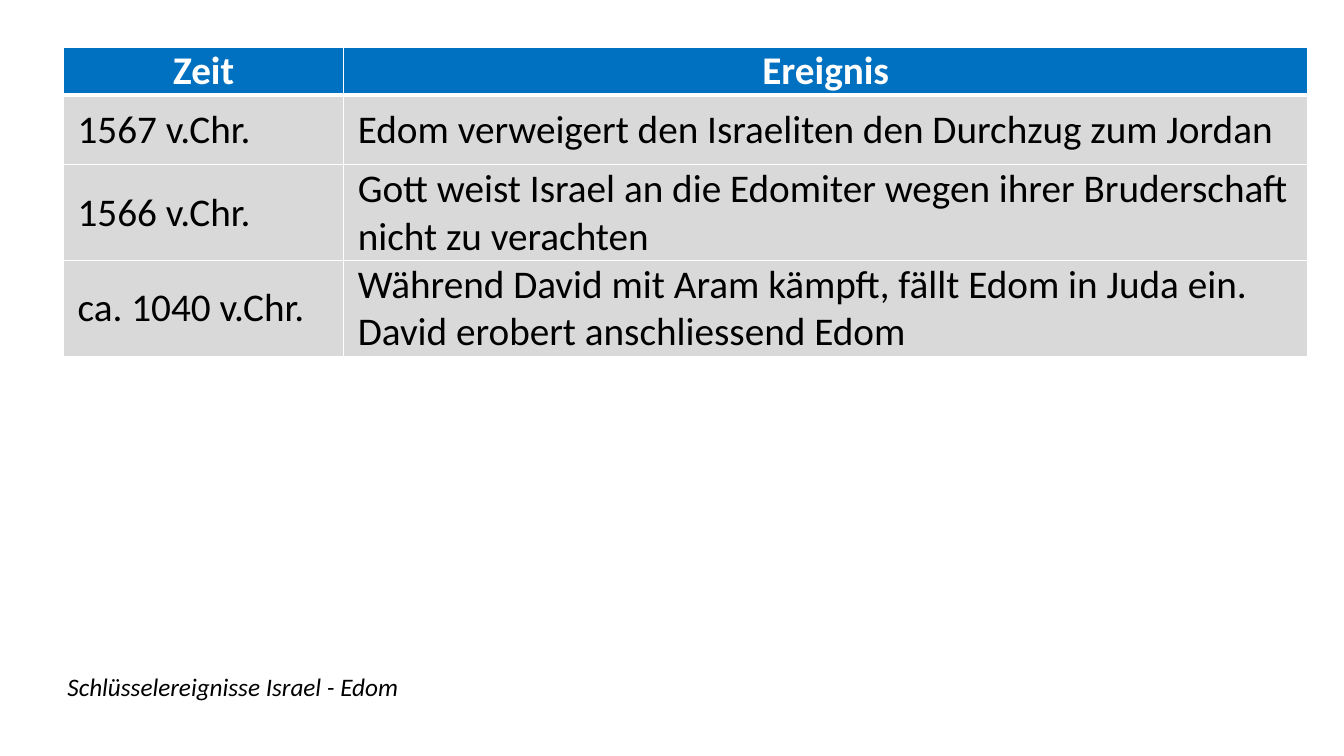
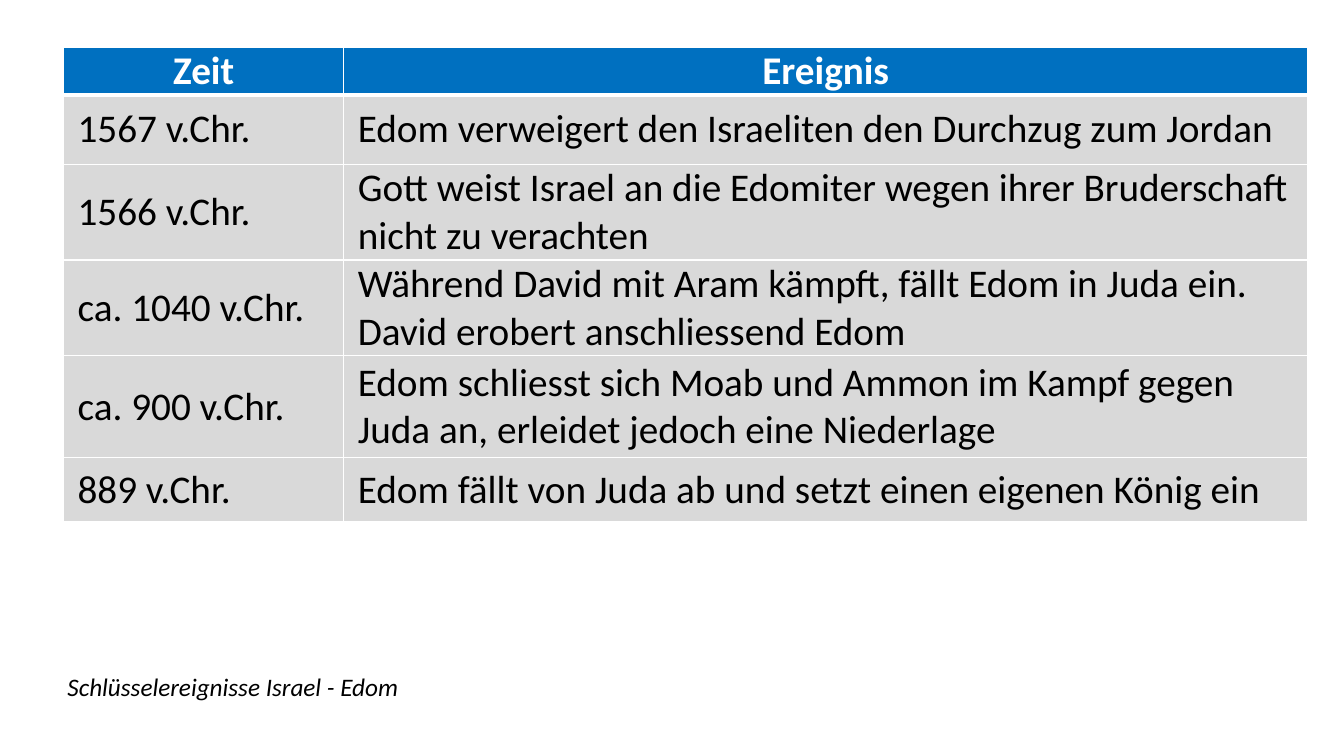
"""Build two slides listing key events between Israel and Edom."""
from lxml.etree import SubElement
from pptx import Presentation
from pptx.dml.color import RGBColor
from pptx.enum.text import MSO_ANCHOR as Anchor, MSO_AUTO_SIZE as AutoSize, PP_ALIGN as Align
from pptx.oxml.ns import qn
from pptx.util import Inches, Pt

HEADINGS = ("Zeit", "Ereignis")
EVENTS = [
    ("1567 v.Chr.", "Edom verweigert den Israeliten den Durchzug zum Jordan", 0.69),
    ("1566 v.Chr.", "Gott weist Israel an die Edomiter wegen ihrer Bruderschaft nicht zu verachten", 0.95),
    ("ca. 1040 v.Chr.", "Während David mit Aram kämpft, fällt Edom in Juda ein. "
     "David erobert anschliessend Edom", 0.95),
    ("ca. 900 v.Chr.", "Edom schliesst sich Moab und Ammon im Kampf gegen Juda an, "
     "erleidet jedoch eine Niederlage", 1.01),
    ("889 v.Chr.", "Edom fällt von Juda ab und setzt einen eigenen König ein", 0.64),
]
EVENTS_PER_SLIDE = (3, 5)
FOOTER = "Schlüsselereignisse Israel - Edom"

COLORS = {"header": "0070C0", "body": "D9D9D9", "white": "FFFFFF", "black": "000000"}
HEADER_FONT = {"name": "Calibri", "size": Pt(28), "bold": True}
BODY_FONT = {**HEADER_FONT, "bold": False}
FOOTER_FONT = {"name": "Calibri", "size": Pt(18), "italic": True}
CELL_FORMAT = {
    "vertical_anchor": Anchor.MIDDLE,
    "margin_left": Inches(0.14), "margin_right": Inches(0.14),
    "margin_top": 0, "margin_bottom": 0,
}
COLUMN_WIDTHS = (2.78, 9.56)
HEADER_HEIGHT = 0.47
TABLE_LEFT, TABLE_TOP = 0.63, 0.47


def set_attributes(target, values):
    for name, value in values.items():
        setattr(target, name, value)


def write(paragraph, text, font, color):
    run = paragraph.add_run()
    run.text = text
    set_attributes(run.font, font)
    run.font.color.rgb = RGBColor.from_string(COLORS[color])


def add_borders(cell, top, bottom):
    properties = cell._tc.get_or_add_tcPr()
    for side, points in (("L", 1), ("R", 1), ("T", top), ("B", bottom)):
        line = SubElement(properties, qn(f"a:ln{side}"), w=str(Pt(points)))
        fill = SubElement(line, qn("a:solidFill"))
        SubElement(fill, qn("a:srgbClr"), val=COLORS["white"])


def add_event_table(slide, events):
    rows = [(*HEADINGS, HEADER_HEIGHT), *events]
    height = sum(row[-1] for row in rows)
    table = slide.shapes.add_table(
        len(rows), len(HEADINGS), Inches(TABLE_LEFT), Inches(TABLE_TOP),
        Inches(sum(COLUMN_WIDTHS)), Inches(height)).table
    for column, width in zip(table.columns, COLUMN_WIDTHS):
        column.width = Inches(width)
    for row_index, (*texts, row_height) in enumerate(rows):
        is_header = row_index == 0
        table.rows[row_index].height = Inches(row_height)
        for column_index, text in enumerate(texts):
            cell = table.cell(row_index, column_index)
            set_attributes(cell, CELL_FORMAT)
            add_borders(cell, top=3 if row_index == 1 else 1, bottom=3 if is_header else 1)
            cell.fill.solid()
            cell.fill.fore_color.rgb = RGBColor.from_string(COLORS["header" if is_header else "body"])
            paragraph = cell.text_frame.paragraphs[0]
            paragraph.alignment = Align.CENTER if is_header else Align.LEFT
            write(paragraph, text, HEADER_FONT if is_header else BODY_FONT,
                  "white" if is_header else "black")


def add_footer(slide):
    box = slide.shapes.add_textbox(Inches(0.57), Inches(6.61), Inches(3.65), Inches(0.4))
    set_attributes(box.text_frame, {"word_wrap": False, "auto_size": AutoSize.SHAPE_TO_FIT_TEXT})
    write(box.text_frame.paragraphs[0], FOOTER, FOOTER_FONT, "black")


def main():
    presentation = Presentation()
    set_attributes(presentation, {"slide_width": Inches(13.33), "slide_height": Inches(7.5)})
    for count in EVENTS_PER_SLIDE:
        slide = presentation.slides.add_slide(presentation.slide_layouts[6])
        add_event_table(slide, EVENTS[:count])
        add_footer(slide)
    presentation.save("out.pptx")


if __name__ == "__main__":
    main()
